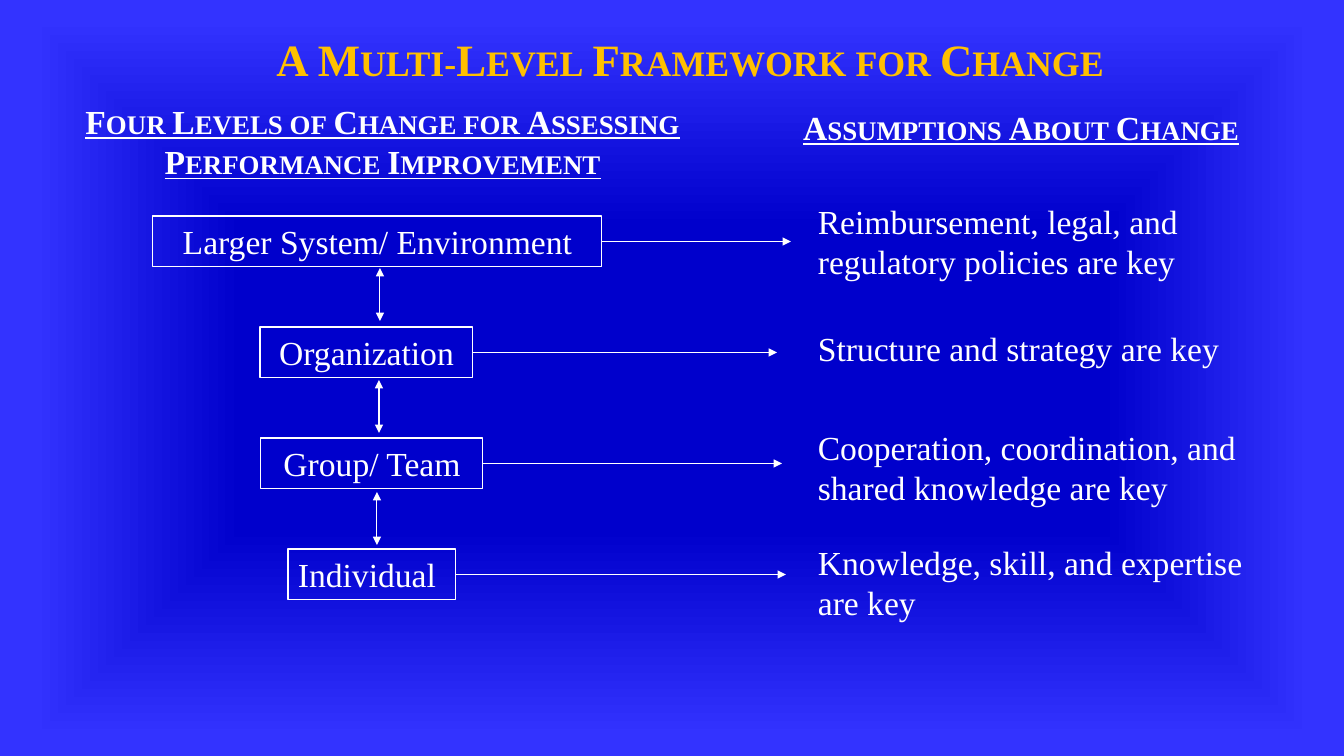
from pptx import Presentation
from pptx import util as u
from pptx.dml.color import RGBColor
from pptx.enum import shapes, text
from pptx.oxml import parse_xml
from pptx.oxml.ns import nsdecls, qn
from lxml import etree

# Content: level, box left, box width, arrow end, assumption, its top, width, lines
LEVELS = [
    ("Larger System/ Environment", 153, 449, 791,
     "Reimbursement, legal, and regulatory policies are key", 196, 449, 2),
    ("Organization", 260, 213, 777,
     "Structure and strategy are key", 323, 476, 1),
    ("Group/ Team", 261, 222, 782,
     "Cooperation, coordination, and shared knowledge are key", 422, 509, 2),
    ("Individual", 288, 168, 786,
     "Knowledge, skill, and expertise\nare key", 537, 506, 2),
]
TITLE = "A Multi-Level Framework for Change"
HEADS = [
    ("Four Levels of Change for Assessing Performance Improvement", (66, 96, 633, 92)),
    ("Assumptions About Change", (778, 102, 486, 51)),
]
LINKS = [380, 379, 377]  # x of the arrows between levels

WHITE = RGBColor(0xFF, 0xFF, 0xFF)
GOLD = RGBColor(0xFF, 0xC0, 0x00)
INNER = RGBColor(0x00, 0x00, 0xCC)
OUTER = RGBColor(0x33, 0x33, 0xFF)
FONT = "Times New Roman"

# Layout
SCALE = 914400 / 100.8
TOP, PITCH, BOX_H = 216, 111, 51
LINK_TOP, LINK_STEP, LINK_H = 268, 112, 53
NOTE_X, NOTE_H = 808, {1: 51, 2: 92}


def px(n):
    return u.Emu(round(n * SCALE))


deck = Presentation()
deck.slide_width, deck.slide_height = px(1344), px(756)
slide = deck.slides.add_slide(deck.slide_layouts[6])

# Background: gradient from the centre outwards
slide.element.cSld.insert(0, parse_xml(
    f'<p:bg {nsdecls("p", "a")}><p:bgPr><a:gradFill rotWithShape="1"><a:gsLst>'
    f'<a:gs pos="40000"><a:srgbClr val="{INNER}"/></a:gs>'
    f'<a:gs pos="95000"><a:srgbClr val="{OUTER}"/></a:gs></a:gsLst>'
    '<a:path path="shape"><a:fillToRect l="50000" t="50000" r="50000" b="50000"/></a:path>'
    '</a:gradFill><a:effectLst/></p:bgPr></p:bg>'))


def write(words, place, size=24, color=WHITE, center=False, head=False, under=False, frame=False):
    spot = [px(n) for n in place]
    if frame:
        shape = slide.shapes.add_shape(shapes.MSO_SHAPE.RECTANGLE, *spot)
        shape.shadow.inherit = False
        shape.fill.background()
        shape.line.color.rgb = WHITE
        shape.line.width = u.Pt(0.75)
    else:
        shape = slide.shapes.add_textbox(*spot)
    body = shape.text_frame
    body.word_wrap = True
    body.vertical_anchor = text.MSO_ANCHOR.TOP
    body.text = words
    for para in body.paragraphs:
        para.alignment = text.PP_ALIGN.CENTER if center else text.PP_ALIGN.LEFT
        for run in para.runs:
            font = run.font
            font.name, font.size, font.bold = FONT, u.Pt(size), head
            font.underline = under
            font.color.rgb = color
            if head:
                run._r.get_or_add_rPr().set("cap", "small")
    return shape


def arrow(x1, y1, x2, y2, both=False):
    line = slide.shapes.add_connector(
        shapes.MSO_CONNECTOR.STRAIGHT, px(x1), px(y1), px(x2), px(y2))
    line.line.color.rgb = WHITE
    line.line.width = u.Pt(0.75)
    stroke = line.line._get_or_add_ln()
    for end in ("headEnd", "tailEnd") if both else ("tailEnd",):
        etree.SubElement(stroke, qn("a:" + end), type="triangle")
    etree.SubElement(line.element.spPr, qn("a:effectLst"))
    return line


# Title and column heads
write(TITLE, (224, 27, 932, 65), size=32, color=GOLD, center=True, head=True)
for words, place in HEADS:
    write(words, place, center=True, head=True, under=True)

# Levels, each with an arrow to its assumption
for i, (level, left, width, tip, note, note_y, note_w, rows) in enumerate(LEVELS):
    top = TOP + i * PITCH
    mid = top + BOX_H / 2
    box = write(level, (left, top, width, BOX_H), center=level != "Individual", frame=True)
    arrow(left + width, mid, tip, mid).begin_connect(box, 3)
    write(note, (NOTE_X, note_y, note_w, NOTE_H[rows]))

# Two-way arrows between levels
for i, x in enumerate(LINKS):
    y = LINK_TOP + i * LINK_STEP
    arrow(x, y, x, y + LINK_H, both=True)

deck.save("out.pptx")
